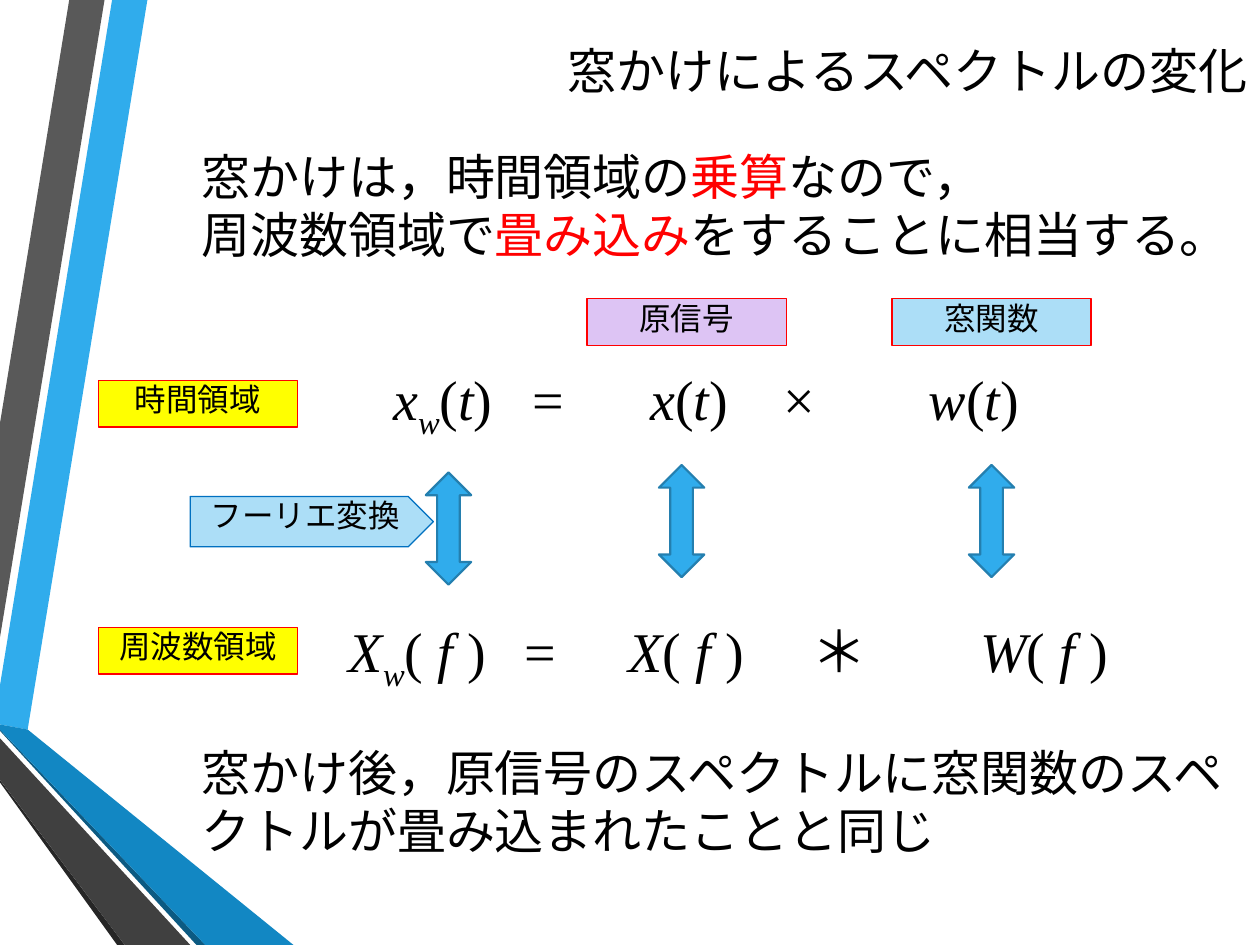
from lxml.etree import SubElement
from pptx import Presentation
from pptx.dml.color import RGBColor
from pptx.enum.lang import MSO_LANGUAGE_ID
from pptx.enum.shapes import MSO_SHAPE
from pptx.enum.text import MSO_ANCHOR, MSO_AUTO_SIZE, PP_ALIGN
from pptx.oxml.ns import qn
from pptx.util import Inches, Pt

BLACK, RED, BLUE, PALE_BLUE = "000000", "FF0000", "30ACEC", "ACDEF7"
SERIF = "Times New Roman"
rgb = RGBColor.from_string


def add_span(para, text, size=28, font="Cabin", color=BLACK, italic=False, baseline=0):
    span = para.add_run()
    span.text = text
    span.font.size = Pt(size)
    span.font.name = font
    span.font.color.rgb = rgb(color)
    span.font.italic = italic
    span.font.language_id = MSO_LANGUAGE_ID.JAPANESE
    if baseline:
        span.font._element.set("baseline", str(baseline * 1000))


def paint(shape, fill, line=None, width=0.75):
    shape.shadow.inherit = False
    shape.fill.solid()
    shape.fill.fore_color.rgb = rgb(fill)
    if line:
        shape.line.color.rgb = rgb(line)
        shape.line.width = Pt(width)
    else:
        shape.line.fill.background()


deck = Presentation()
deck.slide_width, deck.slide_height = Inches(10), Inches(7.5)
page = deck.slides.add_slide(deck.slide_layouts[5])

# Ribbons along the left edge
ribbons = [
    (BLUE, [(0, 5.44), (0, 5.75), (0.22, 5.79), (1.17, 0), (0.89, 0)]),
    ("595959", [(0.83, 0), (0.55, 0), (0, 3.36), (0, 5.06)]),
    ("262626", [(0, 6.19), (0, 6.21), (0.93, 7.5), (0.99, 7.5)]),
    ("0C5A82", [(0, 5.79), (0, 5.8), (1.56, 7.5), (1.63, 7.5)]),
    ("1287C3", [(0, 5.79), (1.63, 7.5), (2.33, 7.5), (0.22, 5.79), (0, 5.75)]),
    ("404040", [(0, 6.19), (0.99, 7.5), (1.51, 7.5), (0, 5.86)]),
]
for color, corners in ribbons:
    points = [(Inches(x), Inches(y)) for x, y in corners]
    outline = page.shapes.build_freeform(*points[0])
    outline.add_line_segments(points[1:], close=True)
    paint(outline.convert_to_shape(), color)

# Title
title = page.shapes.title
title.left, title.top = Inches(1.57), Inches(0.01)
title.width, title.height = Inches(8.43), Inches(1.56)
frame = title.text_frame
frame.auto_size = MSO_AUTO_SIZE.NONE
frame.vertical_anchor = MSO_ANCHOR.MIDDLE
frame.margin_bottom = Inches(0.52)
para = frame.paragraphs[0]
para.alignment = PP_ALIGN.RIGHT
add_span(para, "窓かけによるスペクトルの変化")

# Explanations above and below the formulas
explanations = [
    (1.11, [
        [("窓かけは，時間領域の", BLACK), ("乗算", RED), ("なので，", BLACK)],
        [("周波数領域で", BLACK), ("畳み込み", RED), ("をすることに相当する。", BLACK)],
    ]),
    (5.84, [[("窓かけ後，原信号のスペクトルに窓関数のスペクトルが畳み込まれたことと同じ", BLACK)]]),
]
for top, lines in explanations:
    box = page.shapes.add_textbox(Inches(1.5), Inches(top), Inches(8.32), Inches(1.04))
    frame = box.text_frame
    frame.word_wrap = True
    frame.auto_size = MSO_AUTO_SIZE.SHAPE_TO_FIT_TEXT
    for index, line in enumerate(lines):
        para = frame.add_paragraph() if index else frame.paragraphs[0]
        for text, color in line:
            add_span(para, text, color=color)

# Labels
labels = [
    ("時間領域", MSO_SHAPE.RECTANGLE, 0.78, 3.02, 1.58, 0.37, "FFFF00", RED),
    ("周波数領域", MSO_SHAPE.RECTANGLE, 0.78, 4.98, 1.58, 0.37, "FFFF00", RED),
    ("原信号", MSO_SHAPE.RECTANGLE, 4.66, 2.37, 1.58, 0.37, "DDC4F4", RED),
    ("窓関数", MSO_SHAPE.RECTANGLE, 7.08, 2.37, 1.58, 0.37, PALE_BLUE, RED),
    ("フーリエ変換", MSO_SHAPE.PENTAGON, 1.51, 3.94, 1.93, 0.4, PALE_BLUE, "0070C0"),
]
for text, kind, left, top, width, height, fill, line in labels:
    label = page.shapes.add_shape(kind, Inches(left), Inches(top), Inches(width), Inches(height))
    paint(label, fill, line)
    frame = label.text_frame
    frame.margin_left = frame.margin_right = frame.margin_top = frame.margin_bottom = 0
    frame.vertical_anchor = MSO_ANCHOR.TOP
    para = frame.paragraphs[0]
    para.alignment = PP_ALIGN.CENTER
    add_span(para, text, size=18, font=SERIF)

# Arrows between the two domains
for left, top in [(3.38, 3.75), (5.23, 3.69), (7.69, 3.69)]:
    arrow = page.shapes.add_shape(
        MSO_SHAPE.UP_DOWN_ARROW, Inches(left), Inches(top), Inches(0.36), Inches(0.89))
    paint(arrow, BLUE, "247FAF", 1.25)

# Formulas: the terms sit on tab stops, measured from the left of the slide
formulas = [
    (3.12, 2.89, [4.23, 5.16, 6.22, 7.37], "x", "w", "(", "t", ")", "×"),
    (2.77, 4.89, [4.16, 4.99, 6.44, 7.78], "X", "W", "( ", "f ", ")", "＊"),
]
for left, top, stops, signal, window, opening, variable, closing, operator in formulas:
    box = page.shapes.add_textbox(Inches(left), Inches(top), Inches(8.9 - left), Inches(0.72))
    frame = box.text_frame
    frame.word_wrap = True
    frame.margin_left = frame.margin_right = frame.margin_top = frame.margin_bottom = 0
    para = frame.paragraphs[0]
    tabs = SubElement(para._p.get_or_add_pPr(), qn("a:tabLst"))
    for stop in stops:
        SubElement(tabs, qn("a:tab"), pos=str(Inches(stop - left)), algn="l")
    terms = [(signal, "w", "\t=\t"), (signal, "", f"\t{operator}\t"), (window, "", "")]
    for name, subscript, gap in terms:
        add_span(para, name, size=32, font=SERIF, italic=True)
        if subscript:
            add_span(para, subscript, size=32, font=SERIF, italic=True, baseline=-25)
        add_span(para, opening, size=32, font=SERIF)
        add_span(para, variable, size=32, font=SERIF, italic=True)
        add_span(para, closing + gap, size=32, font=SERIF)

deck.save("out.pptx")
